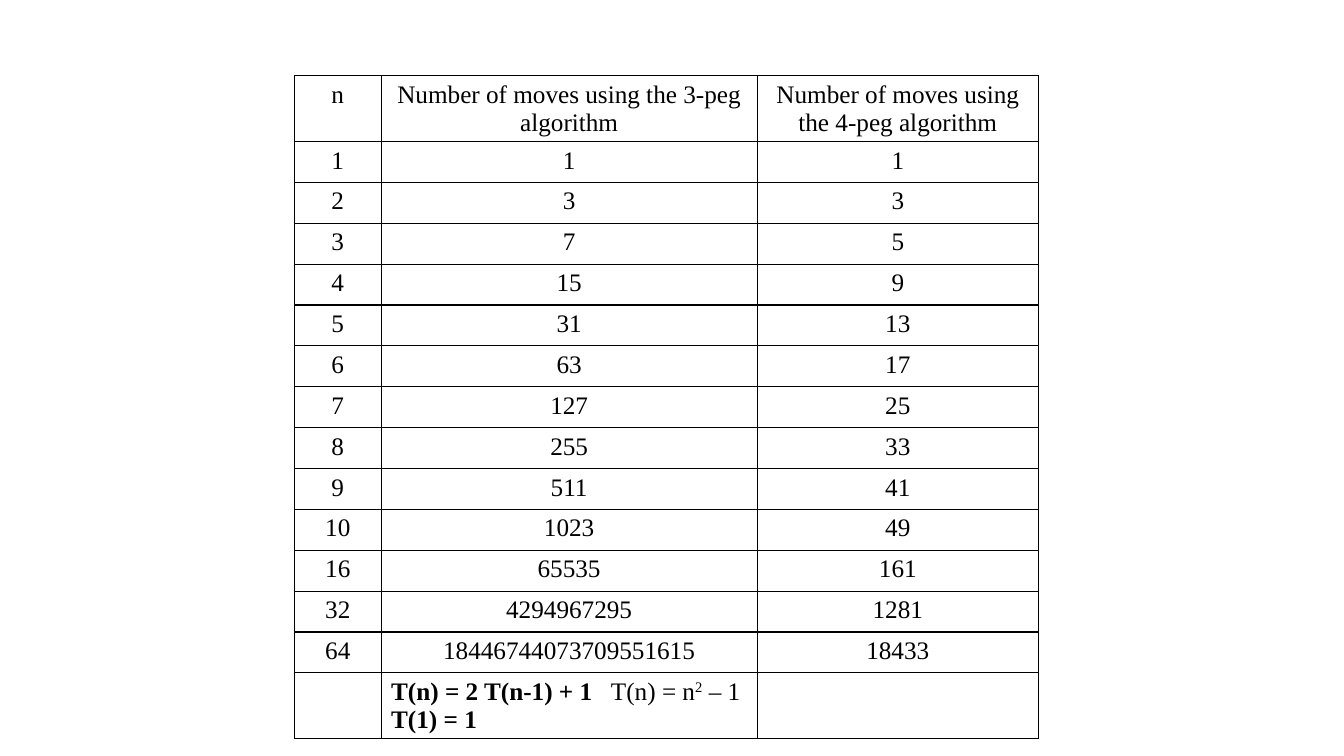
from lxml.etree import SubElement
from pptx import Presentation
from pptx.dml.color import RGBColor
from pptx.enum.text import PP_ALIGN
from pptx.oxml.ns import qn
from pptx.util import Inches, Pt

BLACK = RGBColor(0x00, 0x00, 0x00)
WHITE = RGBColor(0xFF, 0xFF, 0xFF)
FONT_NAME = "Times New Roman"
FONT_SIZE = Pt(18)
BORDER_WIDTH = Pt(1)

COLUMN_WIDTHS = [0.86, 3.73, 2.79]
ROW_HEIGHT = Pt(29.2)
HEADER = [
    "n",
    "Number of moves using the 3-peg algorithm",
    "Number of moves using the 4-peg algorithm",
]
FOUR_PEG_MOVES = {
    1: 1, 2: 3, 3: 5, 4: 9, 5: 13, 6: 17, 7: 25, 8: 33,
    9: 41, 10: 49, 16: 161, 32: 1281, 64: 18433,
}


def format_font(font, bold=False):
    font.name = FONT_NAME
    font.size = FONT_SIZE
    font.bold = bold
    font.color.rgb = BLACK


def add_borders(cell):
    properties = cell._tc.get_or_add_tcPr()
    for side in ("a:lnL", "a:lnR", "a:lnT", "a:lnB"):
        line = SubElement(properties, qn(side), w=str(BORDER_WIDTH))
        fill = SubElement(line, qn("a:solidFill"))
        SubElement(fill, qn("a:srgbClr"), val=str(BLACK))


def style_cell(cell):
    add_borders(cell)
    cell.fill.solid()
    cell.fill.fore_color.rgb = WHITE


def fill_cell(cell, text):
    cell.text_frame.text = text
    paragraph = cell.text_frame.paragraphs[0]
    paragraph.alignment = PP_ALIGN.CENTER
    for run in paragraph.runs:
        format_font(run.font)


def add_run(paragraph, text, bold=False):
    run = paragraph.add_run()
    run.text = text
    format_font(run.font, bold)
    return run


def write_formulas(cell):
    recurrence = cell.text_frame.paragraphs[0]
    # The tab stop separates the recurrence from the closed form
    tab_list = SubElement(recurrence._p.get_or_add_pPr(), qn("a:tabLst"))
    SubElement(tab_list, qn("a:tab"), pos=str(Inches(2.18)), algn="l")
    add_run(recurrence, "T(n) = 2 T(n-1) + 1\t", bold=True)
    add_run(recurrence, "T(n) = n")
    exponent = add_run(recurrence, "2")
    exponent._r.get_or_add_rPr().set("baseline", "30000")
    add_run(recurrence, " – 1")
    add_run(cell.text_frame.add_paragraph(), "T(1) = 1", bold=True)


def add_moves_table(slide, left, top):
    rows = [HEADER]
    rows += [[str(n), str(2**n - 1), str(moves)]
             for n, moves in FOUR_PEG_MOVES.items()]
    row_count = len(rows) + 1
    frame = slide.shapes.add_table(
        row_count, len(HEADER), left, top,
        Inches(sum(COLUMN_WIDTHS)), ROW_HEIGHT * row_count)
    table = frame.table
    table.first_row = False
    table.horz_banding = False

    # Grid
    for column, width in zip(table.columns, COLUMN_WIDTHS):
        column.width = Inches(width)
    for row in table.rows:
        row.height = ROW_HEIGHT
    for cell in table.iter_cells():
        style_cell(cell)

    # Header and move counts
    for row_index, texts in enumerate(rows):
        for column_index, text in enumerate(texts):
            fill_cell(table.cell(row_index, column_index), text)

    # Formulas in the last row
    write_formulas(table.cell(row_count - 1, 1))


def main():
    presentation = Presentation()
    presentation.slide_width = Inches(13.33)
    presentation.slide_height = Inches(7.5)
    slide = presentation.slides.add_slide(presentation.slide_layouts[6])
    add_moves_table(slide, Inches(2.92), presentation.slide_height // 10)
    presentation.save("out.pptx")


if __name__ == "__main__":
    main()
